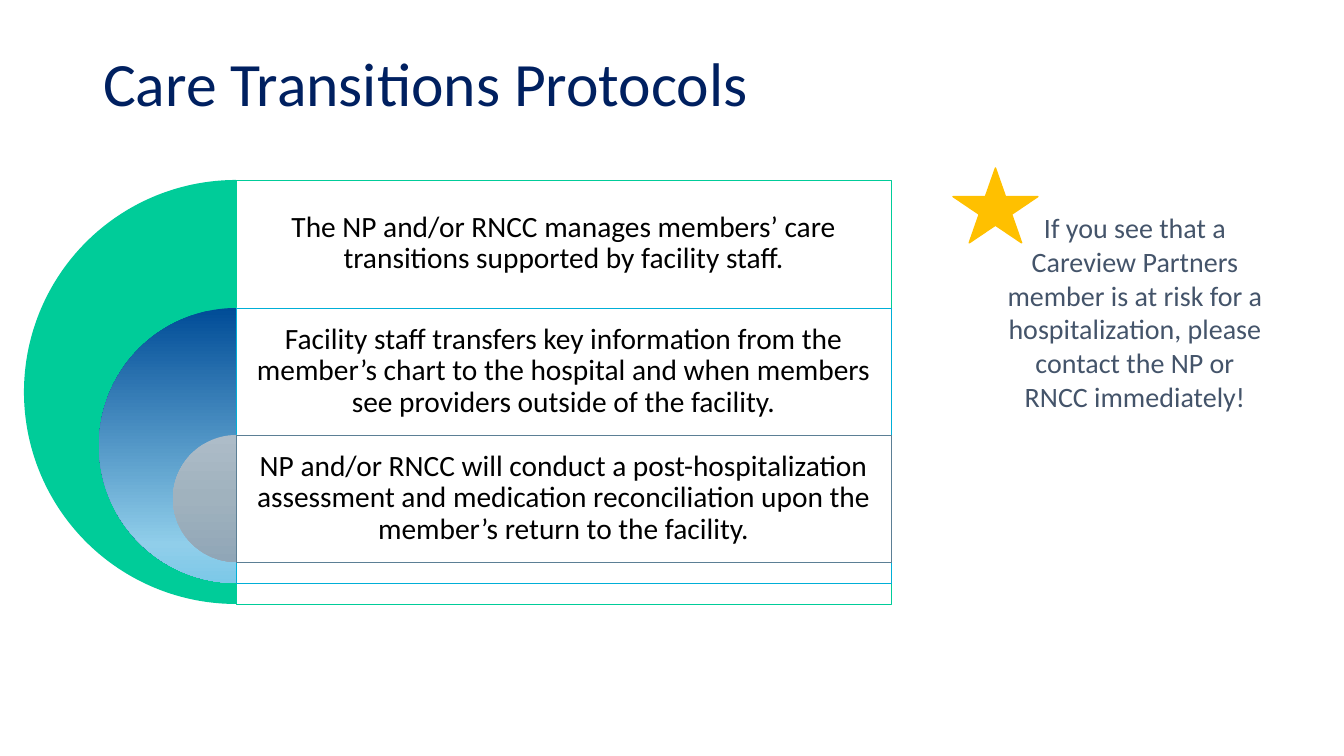
from dataclasses import dataclass
from lxml.etree import SubElement
from pptx import Presentation
from pptx.dml.color import RGBColor as RGB
from pptx.enum.shapes import MSO_SHAPE as SHAPE
from pptx.enum.text import MSO_ANCHOR as ANCHOR, PP_ALIGN as ALIGN
from pptx.oxml.ns import qn
from pptx.util import Emu, Pt

EMU_PER_PX = 12192000 / 1344


@dataclass(frozen=True)
class Theme:
    """Fonts, sizes and colours of the slide."""
    font: str = "Calibri"
    title_size: int = 44
    body_size: int = 21
    note_size: int = 20
    title: str = "002060"
    body: str = "000000"
    note: str = "44546A"
    star: str = "FFC000"
    panel: str = "FFFFFF"
    arcs: tuple = (
        [(0, "00CC99")],
        [(0, "004C97"), (86, "90CEEA"), (100, "7CC8E8")],
        [(0, "ADBCC8"), (50, "A0B2BE"), (100, "90A6B7")],
    )
    borders: tuple = ("00CC99", "00AFD7", "5B7F95")


class Deck:
    """Draws elements on the current slide in one style."""

    def __init__(self, theme):
        self.theme = theme
        self.prs = Presentation()
        self.prs.slide_width, self.prs.slide_height = self.px(1344, 756)

    def px(self, *lengths):
        """Turn pixels into EMU."""
        return [Emu(round(n * EMU_PER_PX)) for n in lengths]

    def add_slide(self, title, box):
        """Start a slide with a formatted title."""
        self.s = self.prs.slides.add_slide(self.prs.slide_layouts[5])
        sp = self.s.shapes.title
        sp.left, sp.top, sp.width, sp.height = self.px(*box)
        self.add_run(sp, title, self.theme.title_size, self.theme.title, ALIGN.LEFT, ANCHOR.MIDDLE, 0.9)

    def add_run(self, sp, text, size, color, align, anchor, spacing):
        """Fill a shape with one formatted run."""
        tf = sp.text_frame
        tf.word_wrap = True
        tf.vertical_anchor = anchor
        p = tf.paragraphs[0]
        p.alignment, p.line_spacing = align, spacing
        r = p.add_run()
        r.text = text
        r.font.name, r.font.size = self.theme.font, Pt(size)
        r.font.color.rgb = RGB.from_string(color)

    def text(self, text, box, size, color, anchor=ANCHOR.TOP, spacing=1.0, inset=None):
        """Add a centred text box."""
        sp = self.s.shapes.add_textbox(*self.px(*box))
        if inset is not None:
            tf = sp.text_frame
            tf.margin_left = tf.margin_right = tf.margin_top = tf.margin_bottom = self.px(inset)[0]
        self.add_run(sp, text, size, color, ALIGN.CENTER, anchor, spacing)

    def shape(self, kind, box, fill, line=None, weight=0.5, opacity=100):
        """Add a preset shape with a plain fill and an optional outline."""
        sp = self.s.shapes.add_shape(kind, *self.px(*box))
        sp.shadow.inherit = False
        sp.fill.solid()
        sp.fill.fore_color.rgb = RGB.from_string(fill)
        if opacity < 100:
            clr = sp._element.spPr.find(qn("a:solidFill"))[0]
            SubElement(clr, qn("a:alpha"), val=str(opacity * 1000))
        if line:
            sp.line.color.rgb = RGB.from_string(line)
            sp.line.width = Pt(weight)
        else:
            sp.line.fill.background()
        return sp

    def half_disc(self, box, stops):
        """Add a left half disc, plain or with a downward gradient."""
        sp = self.shape(SHAPE.PIE, box, stops[0][1])
        sp.adjustments[0], sp.adjustments[1] = 54, 162
        if len(stops) > 1:
            sp.fill.gradient()
            sp.fill.gradient_angle = 270
            gs_lst = sp._element.spPr.find(qn("a:gradFill")).find(qn("a:gsLst"))
            for gs in list(gs_lst):
                gs_lst.remove(gs)
            for pos, color in stops:
                gs = SubElement(gs_lst, qn("a:gs"), pos=str(pos * 1000))
                SubElement(gs, qn("a:srgbClr"), val=color)


PROTOCOLS = [
    "The NP and/or RNCC manages members’ care transitions supported by facility staff.",
    "Facility staff transfers key information from the member’s chart to the hospital "
    "and when members see providers outside of the facility.",
    "NP and/or RNCC will conduct a post-hospitalization assessment and medication "
    "reconciliation upon the member’s return to the facility.",
]
NOTE = ("If you see that a Careview Partners member is at risk for a hospitalization, "
        "please contact the NP or RNCC immediately!")


def main():
    """Build the care transitions slide."""
    theme = Theme()
    deck = Deck(theme)
    deck.add_slide("Care Transitions Protocols", (93, 40, 1159, 94))
    axis, panel_width, row = 236, 655, 127
    for i, text in enumerate(PROTOCOLS):
        top, bottom = 180 + round(127.5 * i), 604 - 21 * i
        size = bottom - top
        deck.half_disc((axis - size // 2, top, size, size), theme.arcs[i])
        deck.shape(SHAPE.RECTANGLE, (axis, top, panel_width, size),
                   theme.panel, theme.borders[i], opacity=90)
        deck.text(text, (axis, top, panel_width, row), theme.body_size, theme.body,
                  ANCHOR.MIDDLE, 0.9, 9)
    deck.shape(SHAPE.STAR_5_POINT, (953, 168, 85, 75), theme.star, theme.star, 1)
    deck.text(NOTE, (995, 206, 280, 214), theme.note_size, theme.note)
    deck.prs.save("out.pptx")


if __name__ == "__main__":
    main()
